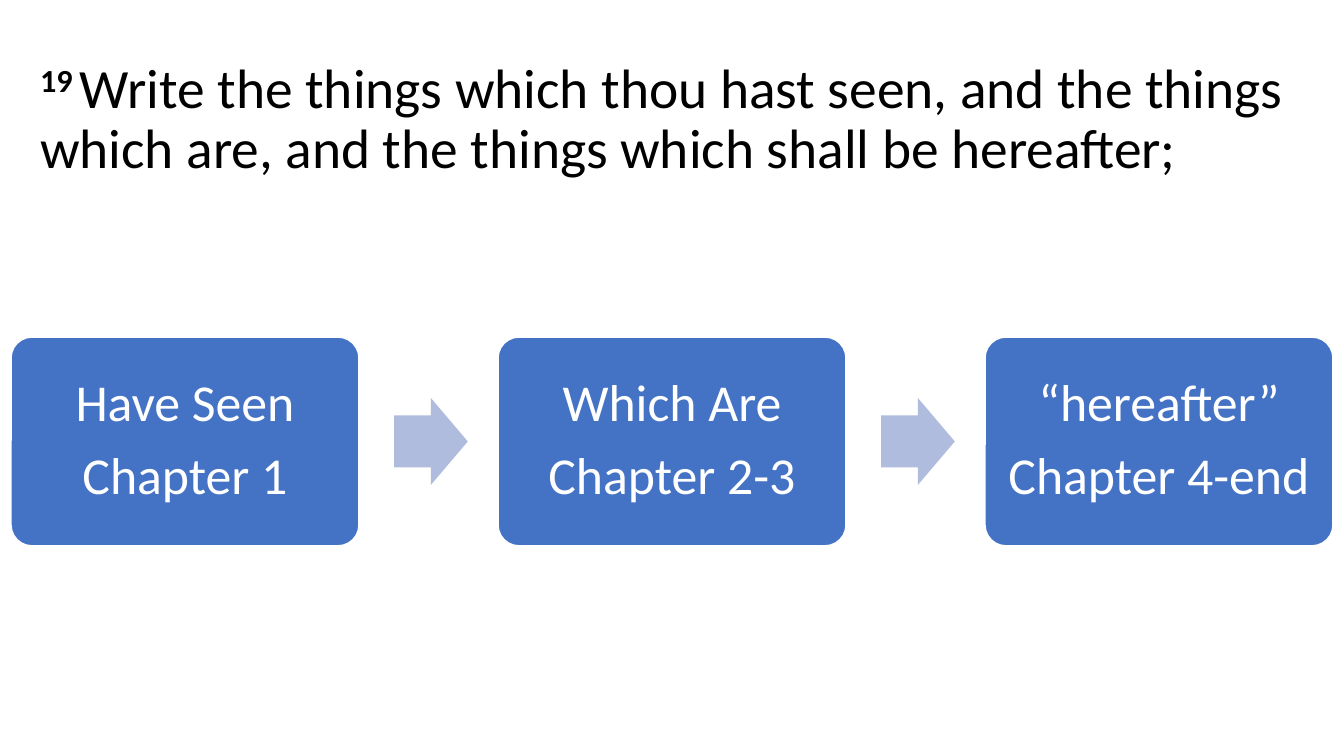
"""Build the slide with verse 19 above its three parts, joined by arrows."""
import pptx
import pptx.util
import pptx.dml.color
import pptx.enum.shapes
import pptx.enum.text

Inches = pptx.util.Inches
Pt = pptx.util.Pt
SHAPES = pptx.enum.shapes.MSO_SHAPE
MIDDLE = pptx.enum.text.MSO_ANCHOR.MIDDLE


def paint(colour_format, hex_colour):
    colour_format.rgb = pptx.dml.color.RGBColor.from_string(hex_colour)


def style(run, size, hex_colour):
    run.font.name = "Calibri"
    run.font.size = Pt(size)
    paint(run.font.color, hex_colour)


deck = pptx.Presentation()
deck.slide_width, deck.slide_height = Inches(13.33), Inches(7.5)
slide = deck.slides.add_slide(deck.slide_layouts[6])

verse = slide.shapes.add_textbox(Inches(0.3), Inches(0.4), Inches(12.93), Inches(1.6))
verse.text_frame.word_wrap = True
verse.text_frame.vertical_anchor = MIDDLE
verse_line = verse.text_frame.paragraphs[0]
verse_line.line_spacing = 0.9
number, words = verse_line.add_run(), verse_line.add_run()
number.text = "19 "
words.text = ("Write the things which thou hast seen, and the things which are, "
              "and the things which shall be hereafter;")
for run in (number, words):
    style(run, 39.6, "000000")
number.font.bold = True
number.font._element.set("baseline", "30000")

parts = ["Have Seen\nChapter 1", "Which Are\nChapter 2-3", "“hereafter”\nChapter 4-end"]
left, pitch, middle = 0.11, 4.83, 4.38
part_width, part_height = 3.45, 2.07
arrow_offset, arrow_width, arrow_height = 3.8, 0.73, 0.86

for column, wording in enumerate(parts):
    x = left + column * pitch
    part = slide.shapes.add_shape(
        SHAPES.ROUNDED_RECTANGLE, Inches(x), Inches(middle - part_height / 2),
        Inches(part_width), Inches(part_height))
    part.adjustments[0] = 0.1
    part.shadow.inherit = False
    part.fill.solid()
    paint(part.fill.fore_color, "4472C4")
    paint(part.line.color, "FFFFFF")
    part.line.width = Pt(1)

    frame = part.text_frame
    frame.word_wrap = True
    frame.vertical_anchor = MIDDLE
    frame.margin_left = frame.margin_right = Inches(0.15)
    frame.margin_top = frame.margin_bottom = Inches(0.15)
    frame.text = wording
    for paragraph in frame.paragraphs:
        paragraph.alignment = pptx.enum.text.PP_ALIGN.CENTER
        paragraph.line_spacing = 0.9
        paragraph.space_after = Pt(12.5)
        style(paragraph.runs[0], 37, "FFFFFF")

    if column < len(parts) - 1:
        arrow = slide.shapes.add_shape(
            SHAPES.RIGHT_ARROW, Inches(x + arrow_offset), Inches(middle - arrow_height / 2),
            Inches(arrow_width), Inches(arrow_height))
        arrow.adjustments[0] = 0.6
        arrow.adjustments[1] = 0.5
        arrow.shadow.inherit = False
        arrow.fill.solid()
        paint(arrow.fill.fore_color, "B0BCDE")
        arrow.line.fill.background()

deck.save("out.pptx")
